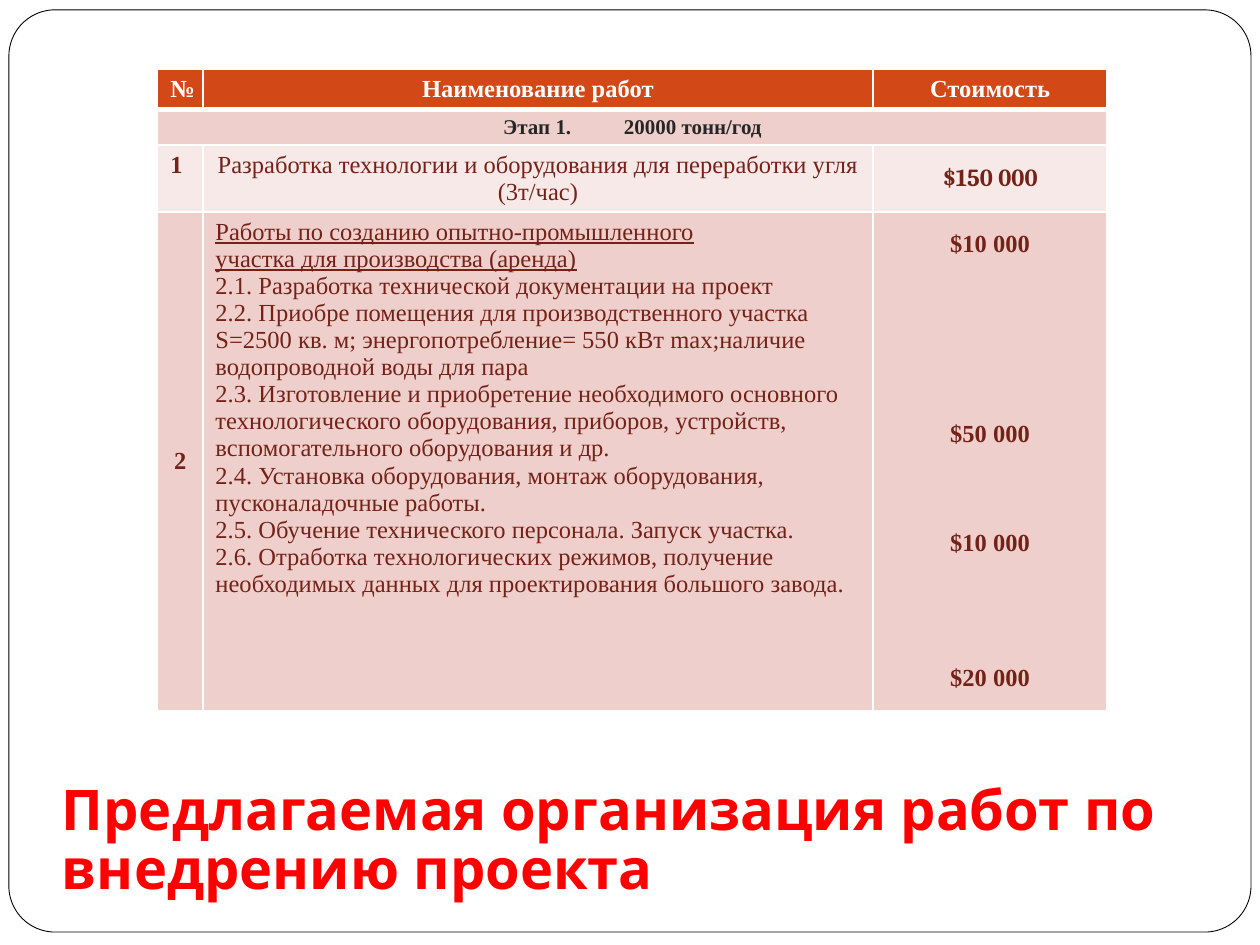
from lxml.etree import SubElement
from pptx import Presentation
from pptx.dml.color import RGBColor
from pptx.enum.shapes import MSO_SHAPE as Form
from pptx.enum.text import MSO_ANCHOR as Anchor, PP_ALIGN as Align
from pptx.oxml.ns import qn
from pptx.util import Cm, Pt

WHITE, RUST, ROSE, PALE = "FFFFFF", "D34817", "EFCFCC", "F7E9E8"
DARK, BROWN, RED = "262626", "742217", "FF0000"
SERIF = "Times New Roman"
LINE = 15.5  # height of one 14 pt line, in points

HEAD = ["№", "Наименование работ", "Стоимость"]
TASKS = [
    "2.1. Разработка технической документации на проект",
    "2.2. Приобре помещения для производственного участка S=2500 кв. м; "
    "энергопотребление= 550 кВт max;наличие водопроводной воды для пара",
    "2.3. Изготовление и приобретение необходимого основного технологического "
    "оборудования, приборов, устройств, вспомогательного оборудования и др.",
    "2.4. Установка оборудования, монтаж оборудования, пусконаладочные работы.",
    "2.5. Обучение технического персонала. Запуск участка.",
    "2.6. Отработка технологических режимов, получение необходимых данных "
    "для проектирования большого завода.",
]
# Price and the number of empty lines above it
COSTS = [("$10 000", 0), ("$50 000", 6), ("$10 000", 3), ("$20 000", 4)]


def rgb(code):
    return RGBColor.from_string(code)


def write(para, text, size=14, font=SERIF, color=BROWN, bold=False,
          under=False, align=Align.LEFT, before=0):
    para.alignment = align
    para.space_before = Pt(before)
    run = para.add_run()
    run.text = text
    face = run.font
    face.size, face.name, face.bold, face.underline = Pt(size), font, bold, under
    face.color.rgb = rgb(color)
    return run


def fill_cell(cell, text, anchor=Anchor.MIDDLE, **look):
    cell.vertical_anchor = anchor
    return write(cell.text_frame.paragraphs[0], text, **look)


def fill_list(cell, items, anchor):
    """Write one paragraph for each pair of text and format."""
    cell.vertical_anchor = anchor
    frame = cell.text_frame
    for i, (text, look) in enumerate(items):
        para = frame.add_paragraph() if i else frame.paragraphs[0]
        write(para, text, **look)


def paint(cell, color, base):
    """Give a cell white borders and a plain fill; base is the lower width."""
    props = cell._tc.get_or_add_tcPr()
    for side, width in (("L", 1), ("R", 1), ("T", 1), ("B", base)):
        edge = SubElement(props, qn("a:ln" + side), w=str(Pt(width)))
        SubElement(SubElement(edge, qn("a:solidFill")), qn("a:srgbClr"), val=WHITE)
    cell.fill.solid()
    cell.fill.fore_color.rgb = rgb(color)


def add_frame(slide, box):
    frame = slide.shapes.add_shape(Form.ROUNDED_RECTANGLE, *map(Cm, box))
    frame.adjustments[0] = 0.05
    frame.shadow.inherit = False
    frame.fill.solid()
    frame.fill.fore_color.rgb = rgb(WHITE)
    frame.line.color.rgb = rgb("000000")
    frame.line.width = Pt(0.5)
    # Send behind the title
    frame.element.getparent().insert(2, frame.element)


def add_title(slide, box):
    title = slide.shapes.title
    title.left, title.top, title.width, title.height = map(Cm, box)
    frame = title.text_frame
    frame.word_wrap = True
    frame.vertical_anchor = Anchor.BOTTOM
    para = frame.paragraphs[0]
    para.line_spacing = 0.88
    write(para, "Предлагаемая организация работ по внедрению проекта",
          size=32, font="Karla", color=RED, bold=True)


def add_costs(slide, box):
    left, top, width, height = box
    wide = [0.91, width - 5.63, 4.72]
    high = [0.8, 0.72, 1.35, height - 2.87]
    grid = slide.shapes.add_table(4, 3, *map(Cm, box)).table
    grid.first_row = grid.horz_banding = False
    for col, size in zip(grid.columns, wide):
        col.width = Cm(size)
    for row, size, color in zip(grid.rows, high, (RUST, ROSE, PALE, ROSE)):
        row.height = Cm(size)
        for cell in row.cells:
            paint(cell, color, 3 if color == RUST else 1)
    strong = dict(bold=True, align=Align.CENTER)

    # Header
    for i, text in enumerate(HEAD):
        fill_cell(grid.cell(0, i), text, color=WHITE, **strong)

    # Stage, with a wide gap made by letter spacing
    stage = grid.cell(1, 0)
    stage.merge(grid.cell(1, 2))
    look = dict(size=12, color=DARK, **strong)
    fill_cell(stage, "Этап 1.", Anchor.TOP, **look)
    para = stage.text_frame.paragraphs[0]
    gap = write(para, " ", **look)
    gap.font._element.set("spc", "2700")
    write(para, "20000 тонн/год", **look)

    # First work
    fill_cell(grid.cell(2, 0), "1", Anchor.TOP, bold=True)
    fill_cell(grid.cell(2, 1), "Разработка технологии и оборудования для "
              "переработки угля (3т/час)", align=Align.CENTER)
    fill_cell(grid.cell(2, 2), "$150 000", font="Cambria", **strong)

    # Second work
    fill_cell(grid.cell(3, 0), "2", **strong)
    lead = dict(under=True, align=Align.JUSTIFY)
    items = [("Работы по созданию опытно-промышленного", lead),
             ("участка для производства (аренда)", lead)]
    items += [(task, {}) for task in TASKS]
    fill_list(grid.cell(3, 1), items, Anchor.TOP)
    prices = [(cost, dict(before=skip * LINE, **strong)) for cost, skip in COSTS]
    fill_list(grid.cell(3, 2), prices, Anchor.MIDDLE)


def main():
    deck = Presentation()
    deck.slide_width, deck.slide_height = Cm(25.4), Cm(19.05)
    slide = deck.slides.add_slide(deck.slide_layouts[5])
    add_frame(slide, (0.18, 0.2, 25.04, 18.59))
    add_costs(slide, (3.18, 1.4, 19.14, 12.93))
    add_title(slide, (0.99, 15.47, 22.73, 2.82))
    deck.save("out.pptx")


if __name__ == "__main__":
    main()
